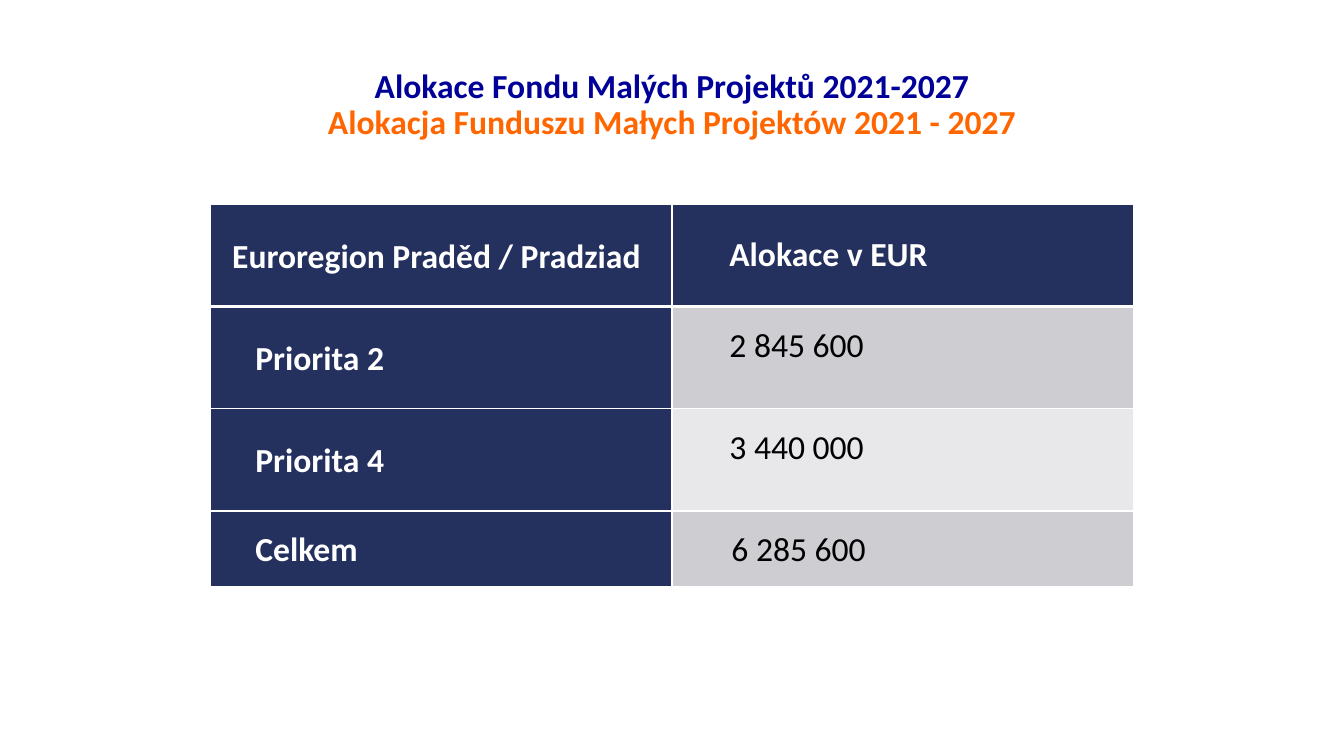
import lxml.etree
import pptx
import pptx.dml.color
import pptx.enum.text
import pptx.oxml.ns
import pptx.util

NAVY, ORANGE, DARK_BLUE = "24305D", "FF6600", "000099"
WHITE, BLACK = "FFFFFF", "000000"
BANDS = ("CDCDD2", "E8E8EA")
MIDDLE = pptx.enum.text.MSO_ANCHOR.MIDDLE


def rgb(value):
    return pptx.dml.color.RGBColor.from_string(value)


def set_all(obj, values):
    for name, value in values.items():
        setattr(obj, name, value)


class SlideBuilder:
    """Places elements on a grid of 96 columns by 54 rows."""

    def __init__(self, prs):
        self.slide = prs.slides.add_slide(prs.slide_layouts[5])
        self.column = prs.slide_width / 96
        self.row = prs.slide_height / 54
        self.font = {"name": "Calibri", "size": pptx.util.Pt(24)}

    def box(self, left, top, width, height):
        return {"left": round(left * self.column), "top": round(top * self.row),
                "width": round(width * self.column), "height": round(height * self.row)}

    def add_text(self, p, text, color, bold):
        r = p.add_run()
        r.text = text
        set_all(r.font, {**self.font, "bold": bold})
        r.font.color.rgb = rgb(color)

    def title(self, lines, box):
        sp = self.slide.shapes.title
        set_all(sp, self.box(*box))
        tf = sp.text_frame
        set_all(tf, {"vertical_anchor": MIDDLE, "word_wrap": True,
                     "auto_size": pptx.enum.text.MSO_AUTO_SIZE.NONE})
        p = tf.paragraphs[0]
        set_all(p, {"alignment": pptx.enum.text.PP_ALIGN.CENTER, "line_spacing": 0.9})
        for i, (text, color) in enumerate(lines):
            if i:
                p.add_line_break()
            self.add_text(p, text, color, True)

    def border(self, cell, widths):
        """Draws white edges; widths are points for left, right, top and bottom."""
        tc_pr = cell._tc.get_or_add_tcPr()
        for i, (side, width) in enumerate(zip("LRTB", widths)):
            ln = lxml.etree.Element(pptx.oxml.ns.qn(f"a:ln{side}"), w=str(int(pptx.util.Pt(width))))
            fill = lxml.etree.SubElement(ln, pptx.oxml.ns.qn("a:solidFill"))
            lxml.etree.SubElement(fill, pptx.oxml.ns.qn("a:srgbClr"), val=WHITE)
            tc_pr.insert(i, ln)

    def cell(self, cell, text, fill, color, bold, left, bottom, spacing):
        """Fills one cell; left and bottom are margins in inches."""
        set_all(cell, {"vertical_anchor": MIDDLE,
                       "margin_left": pptx.util.Inches(left),
                       "margin_right": pptx.util.Inches(0.07),
                       "margin_top": 0,
                       "margin_bottom": pptx.util.Inches(bottom)})
        cell.fill.solid()
        cell.fill.fore_color.rgb = rgb(fill)
        p = cell.text_frame.paragraphs[0]
        p.line_spacing = spacing
        self.add_text(p, text, color, bold)

    def table(self, rows, heights, left, top, width):
        frame = self.slide.shapes.add_table(
            len(rows), len(rows[0]), **self.box(left, top, width, sum(heights)))
        table = frame.table
        for i, (texts, height) in enumerate(zip(rows, heights)):
            table.rows[i].height = round(height * self.row)
            header, total = i == 0, i == len(rows) - 1
            label, value = table.cell(i, 0), table.cell(i, 1)
            self.cell(label, texts[0], NAVY, WHITE, True,
                      0.22 if header else 0.45, 0, 1.07)
            self.cell(value, texts[1],
                      NAVY if header else BANDS[(i - 1) % 2],
                      WHITE if header else BLACK, header,
                      0.59 if total else 0.57,
                      0 if header or total else 0.22,
                      1.07 if total else 0.9)
            for c in (label, value):
                self.border(c, (1, 1, 3 if i == 1 else 1, 3 if header else 1))


def main():
    prs = pptx.Presentation()
    set_all(prs, {"slide_width": pptx.util.Inches(13.33),
                  "slide_height": pptx.util.Inches(7.5)})
    s = SlideBuilder(prs)
    s.title([("Alokace Fondu Malých Projektů 2021-2027", DARK_BLUE),
             ("Alokacja Funduszu Małych Projektów 2021 - 2027", ORANGE)],
            box=(11.25, 4.4, 73.5, 6.25))
    s.table([("Euroregion Praděd / Pradziad", "Alokace v EUR"),
             ("Priorita 2", "2 845 600"),
             ("Priorita 4", "3 440 000"),
             ("Celkem", "6 285 600")],
            heights=(7.3, 7.3, 7.3, 5.4), left=15, top=14.6, width=66)
    prs.save("out.pptx")


if __name__ == "__main__":
    main()
